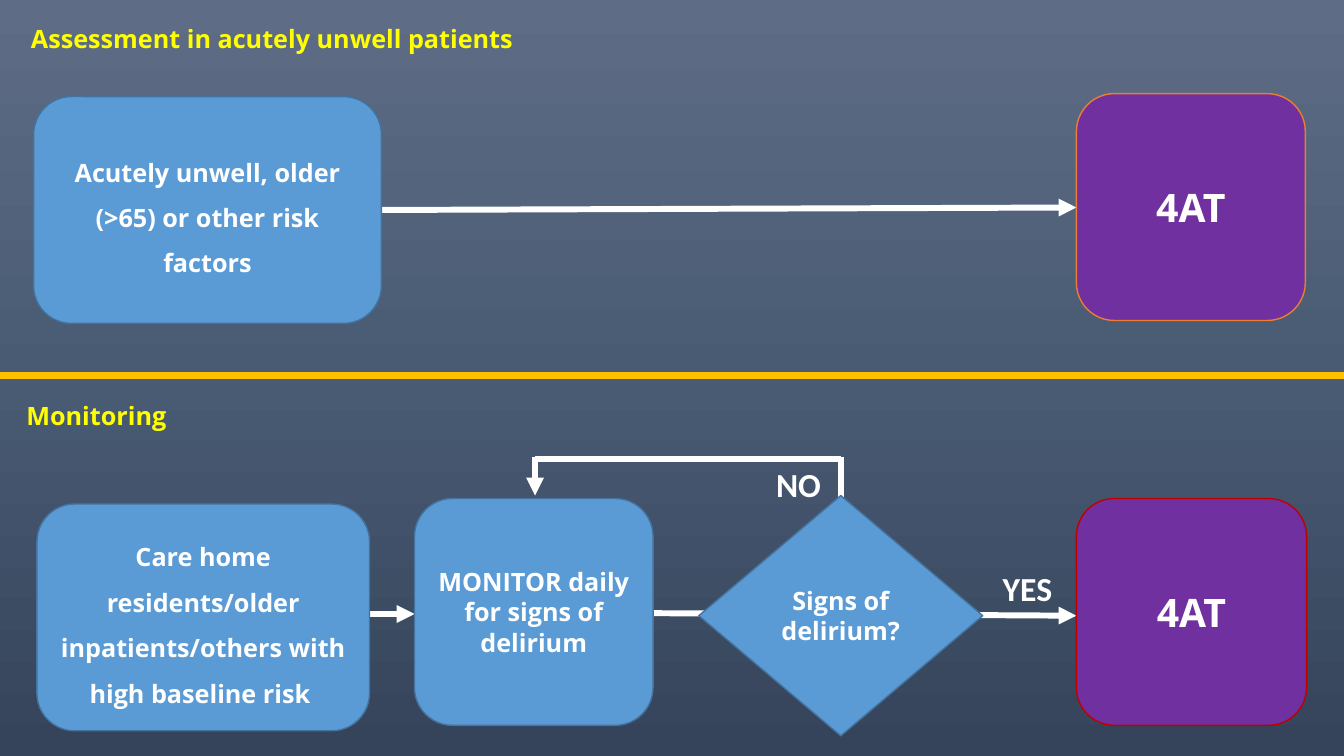
from copy import deepcopy
from dataclasses import dataclass

from pptx import Presentation
from pptx.dml.color import RGBColor
from pptx.enum.shapes import MSO_CONNECTOR as Connector, MSO_SHAPE as Preset
from pptx.enum.text import MSO_ANCHOR as Anchor, MSO_AUTO_SIZE as AutoSize, PP_ALIGN as Align
from pptx.oxml.ns import qn
from pptx.oxml.xmlchemy import OxmlElement
from pptx.slide import Slide
from pptx.text.text import _Paragraph as Paragraph
from pptx.util import Inches, Pt

# Colours
WHITE = RGBColor(0xFF, 0xFF, 0xFF)
YELLOW = RGBColor(0xFF, 0xFF, 0x00)
GOLD = RGBColor(0xFF, 0xC0, 0x00)
BLUE = RGBColor(0x5B, 0x9B, 0xD5)
DARK_BLUE = RGBColor(0x43, 0x73, 0x9E)
PURPLE = RGBColor(0x70, 0x30, 0xA0)
ORANGE = RGBColor(0xED, 0x7D, 0x31)
RED = RGBColor(0xC0, 0x00, 0x00)
BACKDROP = (
    RGBColor(0x5E, 0x6D, 0x85),
    RGBColor(0x49, 0x5A, 0x73),
    RGBColor(0x35, 0x44, 0x5A),
)

# Grid of 160 columns by 90 rows of square cells
COLUMNS, ROWS = 160, 90
CELL = Inches(13.333) / COLUMNS
STEP_HEIGHT = 27


def cells(count: float) -> int:
    return round(count * CELL)


@dataclass
class Step:
    text: str
    column: float
    row: float
    width: float
    height: float = STEP_HEIGHT
    preset: Preset = Preset.ROUNDED_RECTANGLE
    fill: RGBColor = BLUE
    outline: RGBColor = DARK_BLUE
    size: int = 18
    spacing: float = 1.0


@dataclass
class Link:
    start: tuple[float, float]
    end: tuple[float, float]
    arrow: bool = True
    color: RGBColor = WHITE
    weight: float = 4.25


@dataclass
class Label:
    text: str
    column: float
    row: float
    width: float
    height: float
    size: int = 18
    font: str = "Open Sans"
    color: RGBColor = YELLOW
    wrap: bool = True


TEST_COLUMN = 128.15
LOOP_ROW = 54.7
MONITOR_AXIS, DECISION_AXIS = 63.7, 100.1

STEPS = [
    Step("Acutely unwell, older (>65) or other risk factors", 4, 11.5, 41.4, spacing=1.5),
    Step("4AT", TEST_COLUMN, 11.15, 27.25, fill=PURPLE, outline=ORANGE, size=28),
    Step("Care home residents/older inpatients/others with high baseline risk ",
         4.4, 60, 39.6, spacing=1.5),
    Step("4AT", TEST_COLUMN, 59.35, 27.4, fill=PURPLE, outline=RED, size=28),
    Step("MONITOR daily for signs of delirium", 49.35, 59.35, 28.4),
    Step("Signs of delirium?", 83.2, 59, 33.8, 28.6, preset=Preset.FLOWCHART_DECISION),
]

LINKS = [
    Link((0, 44.75), (COLUMNS, 44.75), arrow=False, color=GOLD, weight=5),
    Link((45.4, 25), (TEST_COLUMN, 24.7)),
    Link((44, 73.1), (49.35, 73.1)),
    Link((77.75, 73), (TEST_COLUMN, 73.3)),
    # Loop from the decision back to monitoring
    Link((DECISION_AXIS, 54.4), (DECISION_AXIS, 61.5), arrow=False, weight=4.5),
    Link((DECISION_AXIS, LOOP_ROW), (MONITOR_AXIS, LOOP_ROW), arrow=False),
    Link((MONITOR_AXIS, 54.4), (MONITOR_AXIS, 59)),
]

LABELS = [
    Label("Assessment in acutely unwell patients", 2.5, 2.2, 61, 4.8),
    Label("Monitoring", 1.95, 47.05, 43.3, 4.8),
    Label("YES", 118.2, 67, 8.4, 6, 24, "Calibri", WHITE, wrap=False),
    Label("NO", 91.2, 54.6, 7.8, 6, 24, "Calibri", WHITE, wrap=False),
]


def write(para: Paragraph, text: str, font: str, size: int, color: RGBColor) -> None:
    para.text = text
    para.font.name = font
    para.font.size = Pt(size)
    para.font.bold = True
    para.font.color.rgb = color


def paint_background(page: Slide) -> None:
    fill = page.background.fill
    fill.gradient()
    fill.gradient_angle = 270
    stop_list = page.element.find(".//" + qn("a:gsLst"))
    stop_list.insert(1, deepcopy(stop_list[0]))
    for index, (stop, color) in enumerate(zip(fill.gradient_stops, BACKDROP)):
        stop.position = index / (len(BACKDROP) - 1)
        stop.color.rgb = color


def draw_link(page: Slide, link: Link) -> None:
    line = page.shapes.add_connector(
        Connector.STRAIGHT, *map(cells, link.start), *map(cells, link.end))
    line.line.color.rgb = link.color
    line.line.width = Pt(link.weight)
    if link.arrow:
        head = OxmlElement("a:tailEnd")
        head.set("type", "triangle")
        line.line._get_or_add_ln().append(head)
    line.element.spPr.append(OxmlElement("a:effectLst"))


def draw_step(page: Slide, step: Step) -> None:
    box = page.shapes.add_shape(
        step.preset, *map(cells, (step.column, step.row, step.width, step.height)))
    box.shadow.inherit = False
    box.fill.solid()
    box.fill.fore_color.rgb = step.fill
    box.line.color.rgb = step.outline
    box.line.width = Pt(1)
    frame = box.text_frame
    frame.word_wrap = True
    frame.vertical_anchor = Anchor.MIDDLE
    para = frame.paragraphs[0]
    para.alignment = Align.CENTER
    para.line_spacing = step.spacing
    write(para, step.text, "Open Sans", step.size, WHITE)


def draw_label(page: Slide, label: Label) -> None:
    box = page.shapes.add_textbox(
        *map(cells, (label.column, label.row, label.width, label.height)))
    frame = box.text_frame
    frame.word_wrap = label.wrap
    frame.auto_size = AutoSize.SHAPE_TO_FIT_TEXT
    write(frame.paragraphs[0], label.text, label.font, label.size, label.color)


def main() -> None:
    deck = Presentation()
    deck.slide_width, deck.slide_height = cells(COLUMNS), cells(ROWS)
    page = deck.slides.add_slide(deck.slide_layouts[6])
    paint_background(page)
    # Links lie beneath the steps they join
    for link in LINKS:
        draw_link(page, link)
    for step in STEPS:
        draw_step(page, step)
    for label in LABELS:
        draw_label(page, label)
    deck.save("out.pptx")


if __name__ == "__main__":
    main()
